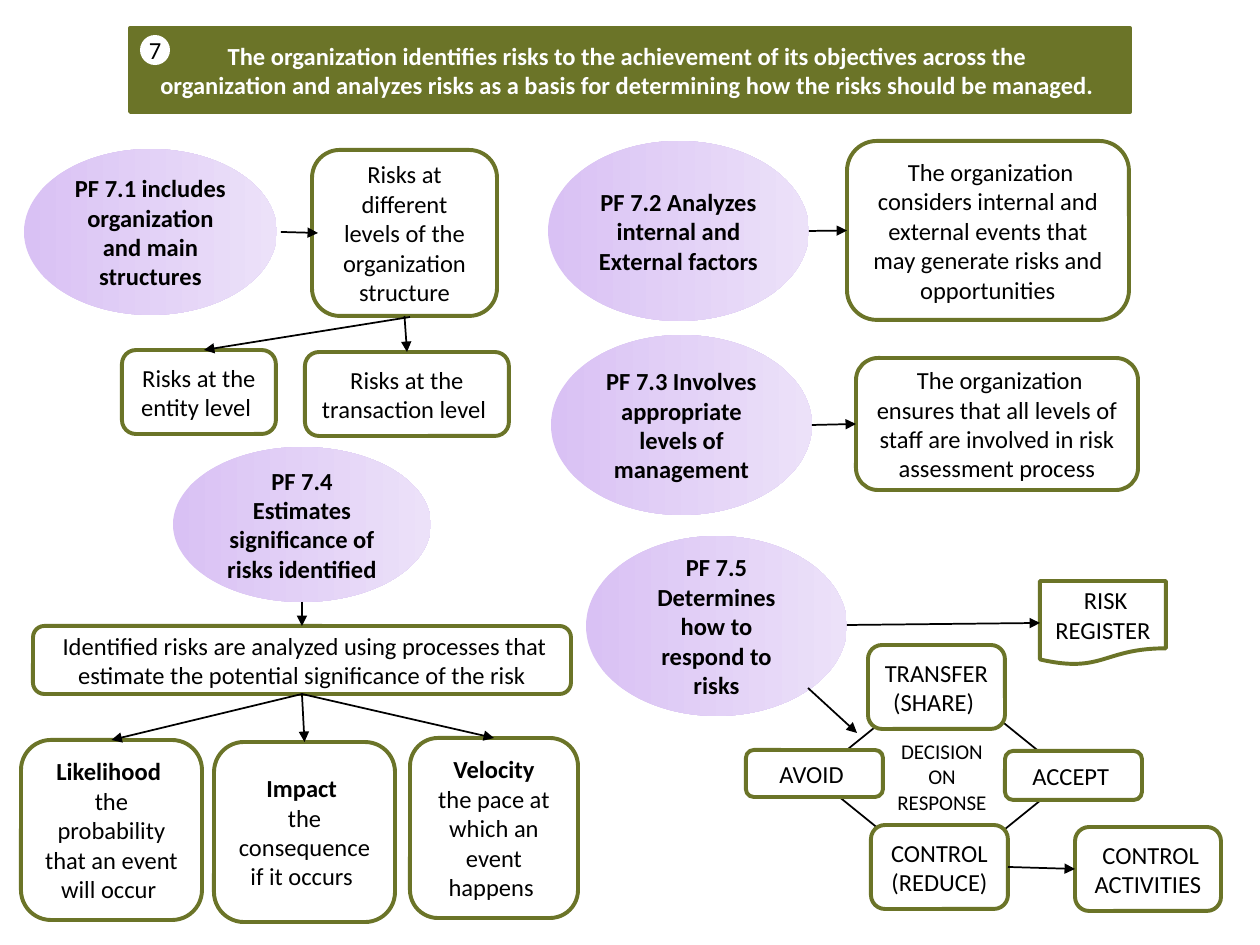
from dataclasses import dataclass
from typing import Union

from lxml import etree
from pptx import Presentation
from pptx.dml.color import RGBColor
from pptx.enum.shapes import MSO_CONNECTOR, MSO_SHAPE
from pptx.enum.text import MSO_ANCHOR, MSO_AUTO_SIZE, PP_ALIGN
from pptx.oxml.ns import qn
from pptx.util import Emu, Pt

OVAL, BOX = MSO_SHAPE.OVAL, MSO_SHAPE.ROUNDED_RECTANGLE
DOCUMENT, DIAMOND = MSO_SHAPE.FLOWCHART_DOCUMENT, MSO_SHAPE.DIAMOND
STRAIGHT = MSO_CONNECTOR.STRAIGHT
TOP, LEFT, BOTTOM, RIGHT = range(4)

EMU_PER_PX = 914400 / 126
FONT = "Calibri"
OLIVE, WHITE, BLACK = "6B7428", "FFFFFF", "000000"
LILAC, PALE_LILAC = "D9C1F4", "ECE1F9"


@dataclass
class Node:
    key: str
    x: int
    y: int
    w: int
    h: int
    text: str
    heading: str = ""
    kind: int = BOX


@dataclass
class Arrow:
    # Each end is a point in px or a (node key, side) pair
    start: tuple[Union[str, int], int]
    end: tuple[Union[str, int], int]


# Points of focus: lilac ovals
FOCUS_POINTS = [
    Node("7.1", 24, 149, 253, 166, "PF 7.1 includes organization and main structures"),
    Node("7.2", 548, 141, 261, 180, "PF 7.2 Analyzes internal and External factors"),
    Node("7.3", 551, 335, 261, 180, "PF 7.3 Involves appropriate levels of management"),
    Node("7.4", 173, 447, 258, 155, "PF 7.4 Estimates significance of risks identified"),
    Node("7.5", 586, 536, 261, 180, "PF 7.5 Determines how to respond to risks"),
]

# Explanations: white boxes with an olive outline
DETAILS = [
    Node("staff", 856, 358, 282, 132,
         " The organization ensures that all levels of staff are involved in risk assessment process"),
    Node("analysis", 33, 626, 538, 68,
         " Identified risks are analyzed using processes that estimate the potential significance of the risk"),
    Node("events", 847, 141, 282, 179,
         " The organization considers internal and external events that may generate risks and opportunities"),
    Node("entity", 122, 350, 154, 84, "Risks at the entity level "),
    Node("register", 1040, 581, 126, 84, " RISK REGISTER", kind=DOCUMENT),
    Node("activities", 1075, 827, 146, 84, " CONTROL ACTIVITIES"),
    Node("likelihood", 21, 740, 181, 180, "the probability that an event will occur ", "Likelihood "),
    Node("levels", 312, 150, 185, 166, "Risks at different levels of the organization structure"),
    Node("transaction", 305, 352, 204, 84, "Risks at the transaction level "),
    Node("impact", 214, 742, 181, 180, "the consequence if it occurs ", "Impact "),
    Node("velocity", 410, 738, 168, 180, "the pace at which an event happens ", "Velocity"),
]

# Response cycle: four options around the decision
DECISION = Node("decision", 814, 673, 256, 207, "DECISION ON RESPONSE", kind=DIAMOND)
OPTIONS = [
    Node("transfer", 868, 645, 137, 84, "TRANSFER\v(SHARE) "),
    Node("avoid", 746, 750, 137, 47, "AVOID "),
    Node("accept", 1005, 751, 137, 49, "ACCEPT "),
    Node("control", 871, 825, 137, 84, "CONTROL\v(REDUCE)"),
]

ARROWS = [
    Arrow((281, 232), (318, 233)),
    Arrow(("levels", BOTTOM), ("transaction", TOP)),
    Arrow((410, 317), (204, 350)),
    Arrow((809, 231), ("events", LEFT)),
    Arrow((812, 425), ("staff", LEFT)),
    Arrow((808, 688), (857, 733)),
    Arrow((847, 625), ("register", LEFT)),
    Arrow(("control", RIGHT), ("activities", LEFT)),
    Arrow((302, 602), ("analysis", TOP)),
    *(Arrow(("analysis", BOTTOM), (outcome, TOP))
      for outcome in ("likelihood", "impact", "velocity")),
]


def px(length: int) -> Emu:
    return Emu(round(length * EMU_PER_PX))


def rgb(color: str) -> RGBColor:
    return RGBColor.from_string(color)


def paint(shape, fill: str, outline: str = "", width: float = 2.25) -> None:
    """Set a plain fill and outline; an empty colour means none."""
    if fill:
        shape.fill.solid()
        shape.fill.fore_color.rgb = rgb(fill)
    else:
        shape.fill.background()
    if outline:
        shape.line.color.rgb = rgb(outline)
        shape.line.width = Pt(width)
    else:
        shape.line.fill.background()


def write(shape, text: str, color: str = BLACK, size: int = 14,
          bold: bool = False, heading: str = "") -> None:
    frame = shape.text_frame
    frame.word_wrap = True
    frame.auto_size = MSO_AUTO_SIZE.NONE
    frame.vertical_anchor = MSO_ANCHOR.MIDDLE
    paragraph = frame.paragraphs[0]
    if heading:
        heading_run = paragraph.add_run()
        heading_run.text = heading
        heading_run.font.bold = True
        paragraph.add_line_break()
        paragraph.add_run().text = text
    else:
        paragraph.text = text
    paragraph.alignment = PP_ALIGN.CENTER
    font = paragraph.font
    font.name, font.size, font.bold = FONT, Pt(size), bold
    font.color.rgb = rgb(color)


def add_node(shapes, node: Node):
    shape = shapes.add_shape(node.kind, px(node.x), px(node.y), px(node.w), px(node.h))
    shape.shadow.inherit = False
    return shape


def add_focus_point(shapes, node: Node) -> None:
    node.kind = OVAL
    oval = add_node(shapes, node)
    paint(oval, "")
    oval.fill.gradient()
    oval.fill.gradient_angle = 0
    for stop, color in zip(oval.fill.gradient_stops, (LILAC, PALE_LILAC)):
        stop.color.rgb = rgb(color)
    write(oval, node.text, bold=True)


def add_detail(shapes, node: Node):
    detail = add_node(shapes, node)
    paint(detail, WHITE, OLIVE)
    write(detail, node.text, heading=node.heading)
    return detail


def add_arrow(shapes, arrow: Arrow, nodes: dict) -> None:
    line = shapes.add_connector(STRAIGHT, 0, 0, 0, 0)
    # Free ends first: joining an end keeps the other in place
    if arrow.start[0] in nodes:
        line.begin_connect(nodes[arrow.start[0]], arrow.start[1])
    else:
        line.begin_x, line.begin_y = map(px, arrow.start)
    if arrow.end[0] in nodes:
        line.end_connect(nodes[arrow.end[0]], arrow.end[1])
    else:
        line.end_x, line.end_y = map(px, arrow.end)
    line.line.color.rgb = rgb(BLACK)
    line.line.width = Pt(1)
    etree.SubElement(line.line._get_or_add_ln(), qn("a:tailEnd"), type="triangle")
    etree.SubElement(line._element.spPr, qn("a:effectLst"))


def main() -> None:
    presentation = Presentation()
    presentation.slide_width, presentation.slide_height = px(1260), px(945)
    slide = presentation.slides.add_slide(presentation.slide_layouts[5])
    shapes = slide.shapes

    # Principle banner with its number
    title = shapes.title
    title.left, title.top, title.width, title.height = map(px, (130, 28, 1000, 84))
    paint(title, OLIVE, OLIVE)
    write(title, "The organization identifies risks to the achievement of its objectives across the \v"
          "organization and analyzes risks as a basis for determining how the risks should be managed. ",
          WHITE, bold=True)
    number = Node("number", 140, 35, 30, 30, "7", kind=OVAL)
    badge = add_node(shapes, number)
    paint(badge, WHITE)
    write(badge, number.text)
    frame = badge.text_frame
    frame.margin_left = frame.margin_right = frame.margin_top = frame.margin_bottom = 0

    # Points of focus and their explanations
    for point in FOCUS_POINTS:
        add_focus_point(shapes, point)
    nodes = {detail.key: add_detail(shapes, detail) for detail in DETAILS}

    # Response cycle
    cycle = shapes.add_group_shape().shapes
    decision = add_node(cycle, DECISION)
    paint(decision, "", BLACK, 1)
    write(decision, DECISION.text, size=12)
    nodes.update({option.key: add_detail(cycle, option) for option in OPTIONS})

    for arrow in ARROWS:
        add_arrow(shapes, arrow, nodes)
    presentation.save("out.pptx")


if __name__ == "__main__":
    main()
